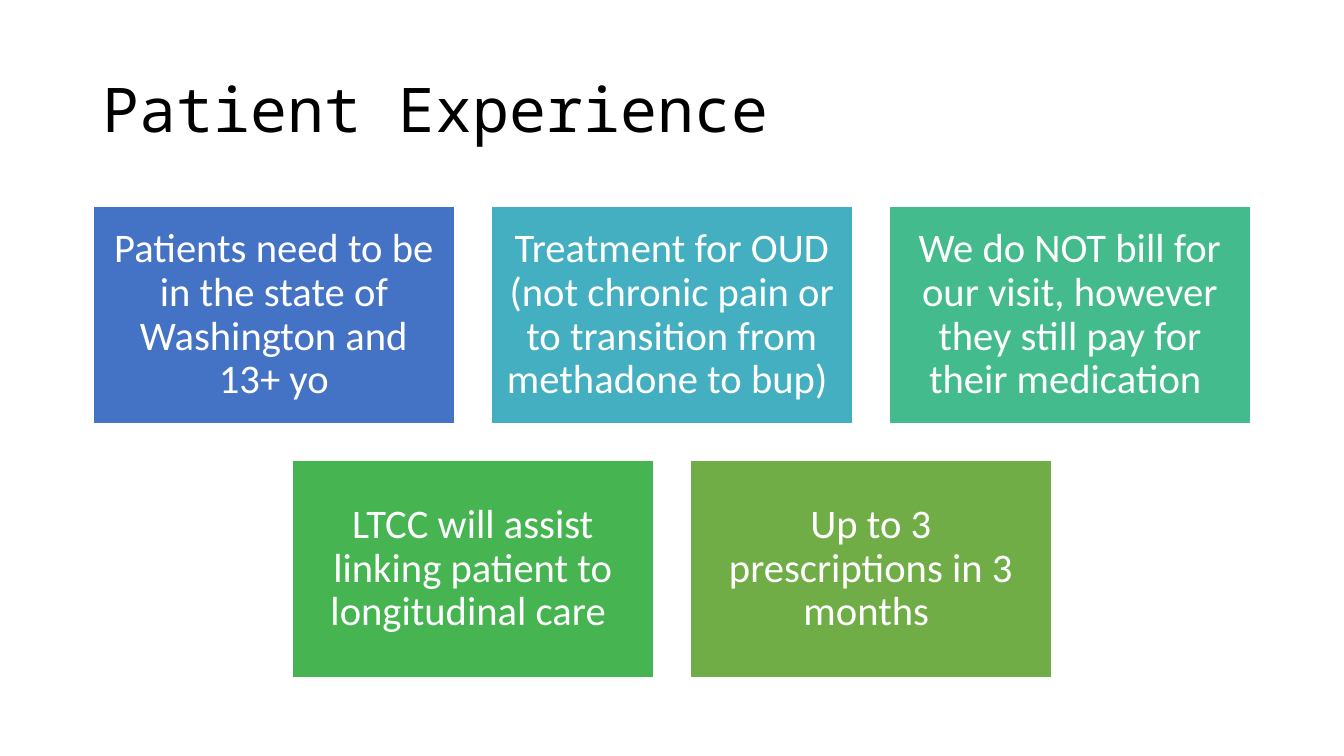
"""Build the Patient Experience slide: a title above five centred cards."""
from pptx import Presentation, util as u
from pptx.dml.color import RGBColor
from pptx.enum import shapes, text

PX = 9144000 / 1008
THEME = {
    "title_font": "Noto Sans Mono", "title_size": 44, "title_color": "000000",
    "card_font": "Calibri", "card_size": 29, "card_color": "FFFFFF",
    "outline": "FFFFFF", "outline_width": 1.5,
}
SLIDE_W, SLIDE_H = 1344, 756
CARD_W, CARD_H, GAP = 362, 218, 36
CARDS_TOP, INSET = 206, 12
ROWS = [
    [("Patients need to be in the state of Washington and 13+ yo", "4472C4"),
     ("Treatment for OUD (not chronic pain or to transition from methadone to bup) ", "43AFC0"),
     ("We do NOT bill for our visit, however they still pay for their medication ", "43BB8D")],
    [("LTCC will assist linking patient to longitudinal care ", "45B451"),
     ("Up to 3 prescriptions in 3 months ", "70AD47")],
]


def px(length):
    """Convert slide pixels to EMU."""
    return u.Emu(round(length * PX))


def write(frame, words, role, align):
    """Fill a text frame with one paragraph in the style of a theme role."""
    frame.text = words
    frame.word_wrap = True
    frame.vertical_anchor = text.MSO_ANCHOR.MIDDLE
    paragraph = frame.paragraphs[0]
    paragraph.alignment = align
    paragraph.line_spacing = 0.9
    font = paragraph.runs[0].font
    font.name = THEME[f"{role}_font"]
    font.size = u.Pt(THEME[f"{role}_size"])
    font.color.rgb = RGBColor.from_string(THEME[f"{role}_color"])


deck = Presentation()
deck.slide_width, deck.slide_height = px(SLIDE_W), px(SLIDE_H)
slide = deck.slides.add_slide(deck.slide_layouts[6])

title = slide.shapes.add_textbox(px(93), px(40), px(1159), px(146))
write(title.text_frame, "Patient Experience", "title", text.PP_ALIGN.LEFT)

for row, cards in enumerate(ROWS):
    row_width = len(cards) * (CARD_W + GAP) - GAP
    row_left = (SLIDE_W - row_width) // 2
    top = CARDS_TOP + row * (CARD_H + GAP)
    for column, (words, fill) in enumerate(cards):
        left = row_left + column * (CARD_W + GAP)
        card = slide.shapes.add_shape(
            shapes.MSO_SHAPE.RECTANGLE, px(left), px(top), px(CARD_W), px(CARD_H))
        card.shadow.inherit = False
        card.fill.solid()
        card.fill.fore_color.rgb = RGBColor.from_string(fill)
        card.line.color.rgb = RGBColor.from_string(THEME["outline"])
        card.line.width = u.Pt(THEME["outline_width"])
        frame = card.text_frame
        frame.margin_left = frame.margin_right = px(INSET)
        frame.margin_top = frame.margin_bottom = px(INSET)
        write(frame, words, "card", text.PP_ALIGN.CENTER)

deck.save("out.pptx")
